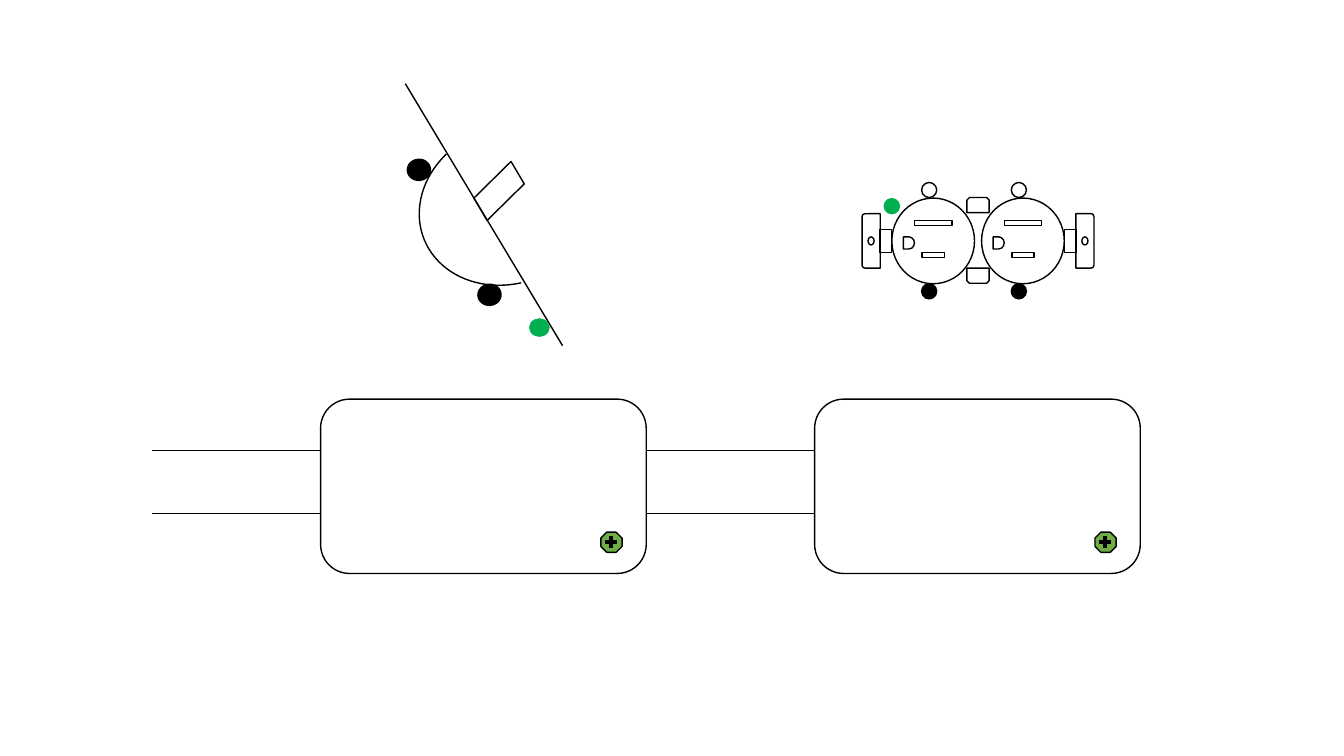
import pptx
import pptx.dml.color
import pptx.enum.shapes
import pptx.oxml
import pptx.oxml.ns
import pptx.util

COLORS = {"black": "000000", "screw": "70AD47", "ground": "00B050"}
KIND = pptx.enum.shapes.MSO_SHAPE
CELL = pptx.util.Inches(0.1)  # side of one grid column and row

deck = pptx.Presentation()
deck.slide_width = pptx.util.Inches(13.33)
deck.slide_height = pptx.util.Inches(7.5)
page = deck.slides.add_slide(deck.slide_layouts[6])


def add_part(kind, column, row, columns, rows, turn=0, fill=None, line="black", weight=1):
    """Draw a preset shape placed in grid cells."""
    frame = [round(cells * CELL) for cells in (column, row, columns, rows)]
    part = page.shapes.add_shape(kind, *frame)
    part.rotation = turn
    part.shadow.inherit = False
    if fill:
        part.fill.solid()
        part.fill.fore_color.rgb = pptx.dml.color.RGBColor.from_string(COLORS[fill])
    else:
        part.fill.background()
    part.line.color.rgb = pptx.dml.color.RGBColor.from_string(COLORS[line])
    part.line.width = pptx.util.Pt(weight)
    return part


def add_line(start_column, start_row, end_column, end_row, weight):
    """Draw a straight black line between two grid points."""
    ends = [round(cells * CELL) for cells in (start_column, start_row, end_column, end_row)]
    stroke = page.shapes.add_connector(pptx.enum.shapes.MSO_CONNECTOR.STRAIGHT, *ends)
    stroke.line.color.rgb = pptx.dml.color.RGBColor.from_string(COLORS["black"])
    stroke.line.width = pptx.util.Pt(weight)
    properties = stroke._element.spPr
    properties.append(pptx.oxml.parse_xml(f"<a:effectLst {pptx.oxml.ns.nsdecls('a')}/>"))


# Junction boxes, each with a conduit on its left and a ground screw
for box_left in (80.8, 31.8):
    add_part(KIND.ROUNDED_RECTANGLE, box_left, 39.6, 32.3, 17.3)
    for conduit_row in (44.7, 50.9):
        add_line(box_left, conduit_row, box_left - 16.75, conduit_row, 0.5)
    add_part(KIND.OCTAGON, box_left + 27.8, 52.8, 2.1, 2, fill="screw")
    add_line(box_left + 28.8, 53.2, box_left + 28.8, 54.4, 3)
    add_line(box_left + 29.4, 53.8, box_left + 28.2, 53.8, 3)

# Receptacle: two outlets with slots, ground hole and terminals
for outlet_left in (88.3, 97.2):
    add_part(KIND.OVAL, outlet_left + 3.1, 28.15, 1.5, 1.5, turn=90, fill="black")
    add_part(KIND.OVAL, outlet_left, 19.8, 8.5, 8.2, turn=90)
    add_part(KIND.RECTANGLE, outlet_left + 4, 20.3, 0.5, 3.7, turn=90)
    add_part(KIND.RECTANGLE, outlet_left + 4, 24.2, 0.5, 2.2, turn=90)
    add_part(KIND.FLOWCHART_DELAY, outlet_left + 1.3, 23.5, 1.1, 1.2)
    add_part(KIND.OVAL, outlet_left + 3.1, 18.1, 1.5, 1.5, turn=90)

# Receptacle: mounting ears, necks and screw holes
for ear_left, neck_left, hole_left, turn in ((104.9, 105, 107.2, 90), (83.7, 86.7, 86, 270)):
    add_part(KIND.ROUND_2_SAME_RECTANGLE, ear_left, 23, 5.4, 1.8, turn=turn)
    add_part(KIND.RECTANGLE, neck_left, 23.3, 2.3, 1.2, turn=turn)
    add_part(KIND.OVAL, hole_left, 23.6, 0.8, 0.6, turn=turn)

# Receptacle: ground terminal and break-off tabs
add_part(KIND.OVAL, 87.7, 19.7, 1.5, 1.5, turn=90, fill="ground", line="ground")
for tab_row, turn in ((26.6, 180), (19.6, 0)):
    add_part(KIND.SNIP_2_SAME_RECTANGLE, 95.9, tab_row, 2.2, 1.5, turn=turn)

# Switch: body, plate, toggle and terminals
body = add_part(KIND.ARC, 41.4, 12.6, 18.1, 15.5, turn=157.7)
body.adjustments[0] = 169.91
body.adjustments[1] = 37.02
add_line(40.2, 8.3, 55.8, 34.3, 1)
add_part(KIND.PARALLELOGRAM, 46.6, 17.7, 5.8, 2.5, turn=315.4)
for terminal_left, terminal_row in ((47.4, 28.2), (40.4, 15.8)):
    add_part(KIND.OVAL, terminal_left, terminal_row, 2.3, 2.1, turn=356, fill="black")
add_part(KIND.OVAL, 52.5, 31.6, 2, 1.8, fill="ground", line="ground", weight=0.25)

deck.save("out.pptx")
